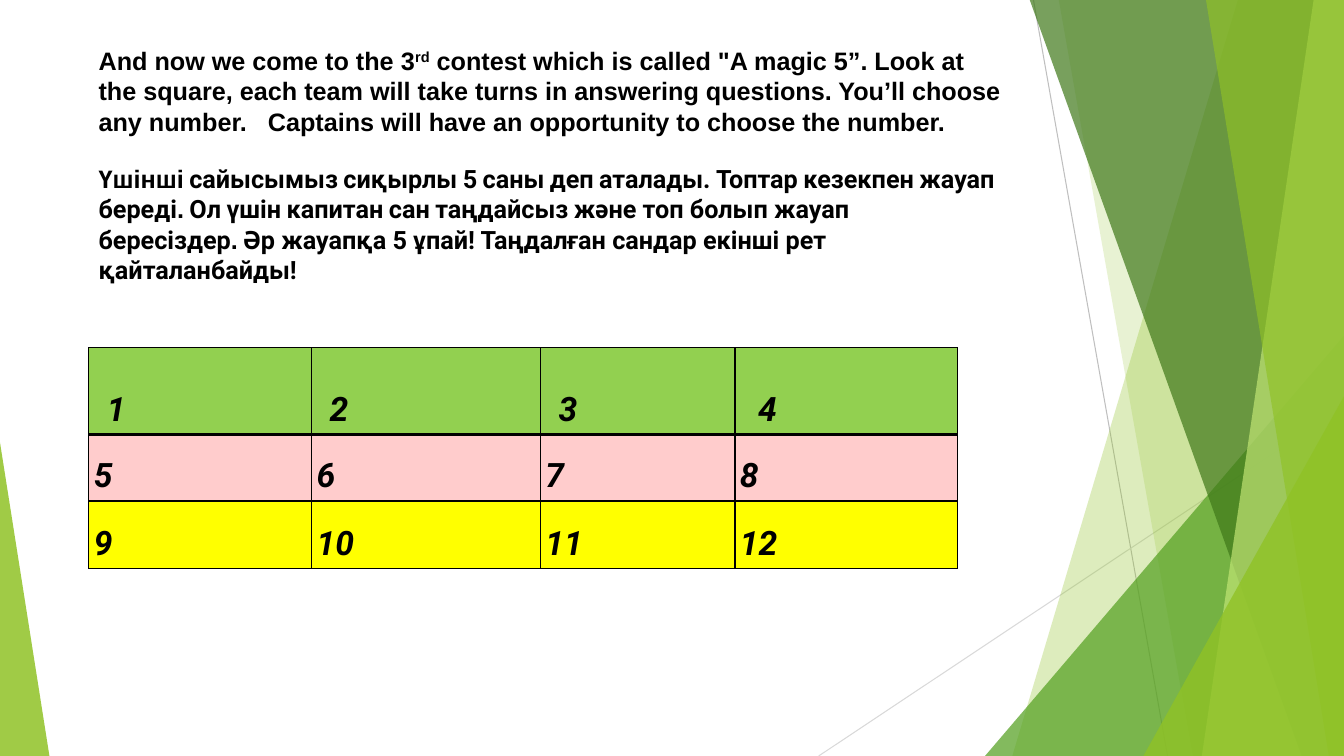
"""Build the "A magic 5" contest slide with its number board."""
from lxml.etree import SubElement
from pptx import Presentation
from pptx.dml.color import RGBColor
from pptx.enum.shapes import MSO_CONNECTOR, MSO_SHAPE
from pptx.enum.text import MSO_ANCHOR, MSO_AUTO_SIZE
from pptx.oxml.ns import qn
from pptx.util import Pt

PX = 9144
WIDTH, HEIGHT = 1333, 750
BLACK = "000000"
HARD_SPACE = chr(160)
ARIAL = {"name": "Arial", "size": Pt(18), "bold": True}
ROBOTO = {"name": "Roboto", "size": Pt(18), "bold": True}
GAP = {"name": "DejaVu Sans", "size": Pt(11), "bold": True}
NUMBER = {"name": "Roboto", "size": Pt(24), "bold": True, "italic": True}


def paint(fill, color, opacity=100):
    fill.solid()
    fill.fore_color.rgb = RGBColor.from_string(color)
    if opacity < 100:
        solid = fill._xPr.find(qn("a:solidFill"))
        SubElement(solid[0], qn("a:alpha"), val=str(opacity * 1000))


def write(paragraph, text, look):
    run = paragraph.add_run()
    run.text = text
    for attribute, value in look.items():
        setattr(run.font, attribute, value)
    paint(run.font.fill, BLACK)
    return run


prs = Presentation()
prs.slide_width, prs.slide_height = WIDTH * PX, HEIGHT * PX
slide = prs.slides.add_slide(prs.slide_layouts[6])
shapes = slide.shapes

rays = [((1025, 0, 1158, 750), "BFBFBF"), ((1333, 403, 812, 750), "D9D9D9")]
for ends, color in rays:
    ray = shapes.add_connector(MSO_CONNECTOR.STRAIGHT, *[end * PX for end in ends])
    ray.line.width = Pt(0.75)
    paint(ray.line.fill, color)
    SubElement(ray._element.spPr, qn("a:effectLst"))

facets = [
    ("band", (1228, 1004), "90C226", 30),
    ("band", (1050, 1183), "90C226", 20),
    ("triangle", (977, 333, 356, 417, 1), "54A021", 72),
    ("band", (1021, 1291), "3F7819", 70),
    ("band", (1303, 1192), "C0E474", 70),
    ("band", (1196, 1318), "90C226", 65),
    ("triangle", (1134, 393, 199, 357, 1), "90C226", 80),
    ("triangle", (0, 439, 49, 311, 0), "90C226", 85),
]
for kind, geometry, color, opacity in facets:
    if kind == "band":
        top_x, bottom_x = geometry
        outline = shapes.build_freeform(top_x, -1, scale=PX)
        outline.add_line_segments([(WIDTH, -1), (WIDTH, HEIGHT), (bottom_x, HEIGHT)])
        facet = outline.convert_to_shape()
    else:
        *box, apex = geometry
        facet = shapes.add_shape(MSO_SHAPE.ISOSCELES_TRIANGLE, *[side * PX for side in box])
        facet.adjustments[0] = apex
    facet.shadow.inherit = False
    facet.line.fill.background()
    paint(facet.fill, color, opacity)

column_widths = [221, 227, 193, 221]
board_rows = [(86, "92D050", [18, 18, 18, 23], 2),
              (66, "FFCCCC", [5, 5, 5, 5], 1),
              (67, "FFFF00", [5, 5, 5, 5], 1)]
board = shapes.add_table(3, 4, 88 * PX, 345 * PX, 862 * PX, 219 * PX).table
board.first_row = board.horz_banding = False
for column, width in zip(board.columns, column_widths):
    column.width = width * PX
for row_index, (height, color, indents, bottom_width) in enumerate(board_rows):
    board.rows[row_index].height = height * PX
    top_width = board_rows[row_index - 1][3] if row_index else 1
    edges = {"a:lnL": 1, "a:lnR": 1, "a:lnT": top_width, "a:lnB": bottom_width}
    for column_index, indent in enumerate(indents):
        cell = board.cell(row_index, column_index)
        cell_format = {"vertical_anchor": MSO_ANCHOR.BOTTOM, "margin_left": indent * PX,
                       "margin_right": 5 * PX, "margin_top": 5 * PX, "margin_bottom": 5 * PX}
        for attribute, value in cell_format.items():
            setattr(cell, attribute, value)
        for edge, points in edges.items():
            border = SubElement(cell._tc.get_or_add_tcPr(), qn(edge), w=str(Pt(points)))
            SubElement(SubElement(border, qn("a:solidFill")), qn("a:srgbClr"), val=BLACK)
        paint(cell.fill, color)
        paragraph = cell.text_frame.paragraphs[0]
        paragraph.line_spacing = 1.07
        paragraph.space_after = Pt(7.5)
        write(paragraph, str(row_index * 4 + column_index + 1), NUMBER)

rules = shapes.add_textbox(88 * PX, 39 * PX, 917 * PX, 249 * PX).text_frame
rules_format = {"word_wrap": True, "vertical_anchor": MSO_ANCHOR.MIDDLE,
                "auto_size": MSO_AUTO_SIZE.SHAPE_TO_FIT_TEXT}
for attribute, value in rules_format.items():
    setattr(rules, attribute, value)

english = rules.paragraphs[0]
write(english, "And now we come to the 3", ARIAL)
ordinal = write(english, "rd", ARIAL)
ordinal.font._element.set("baseline", "30000")
write(english, f"{HARD_SPACE}contest which is called \"A magic 5”. Look at the square, each team "
      "will take turns in answering questions. You’ll choose any number. "
      f"{HARD_SPACE * 2}Captains will have an opportunity to choose the number.", ARIAL)

kazakh = rules.add_paragraph()
kazakh.space_before = Pt(19.5)
kazakh_words = ["|Үшінші", "сайысымыз", "сиқырлы", "5", "саны", "деп", "аталады.", "Топтар",
                "кезекпен", "жауап", "береді|.", "Ол", "үшін", "капитан", "сан", "таңдайсыз",
                "және топ болып жауап бересіздер|.",
                "Әр жауапқа 5 ұпай! Таңдалған сандар екінші рет қайталанбайды!"]
for index, word in enumerate(kazakh_words):
    if index:
        write(kazakh, HARD_SPACE, GAP)
    roboto_part, _, arial_part = word.partition("|")
    for part, look in ((roboto_part, ROBOTO), (arial_part, ARIAL)):
        if part:
            write(kazakh, part, look)

prs.save("out.pptx")
